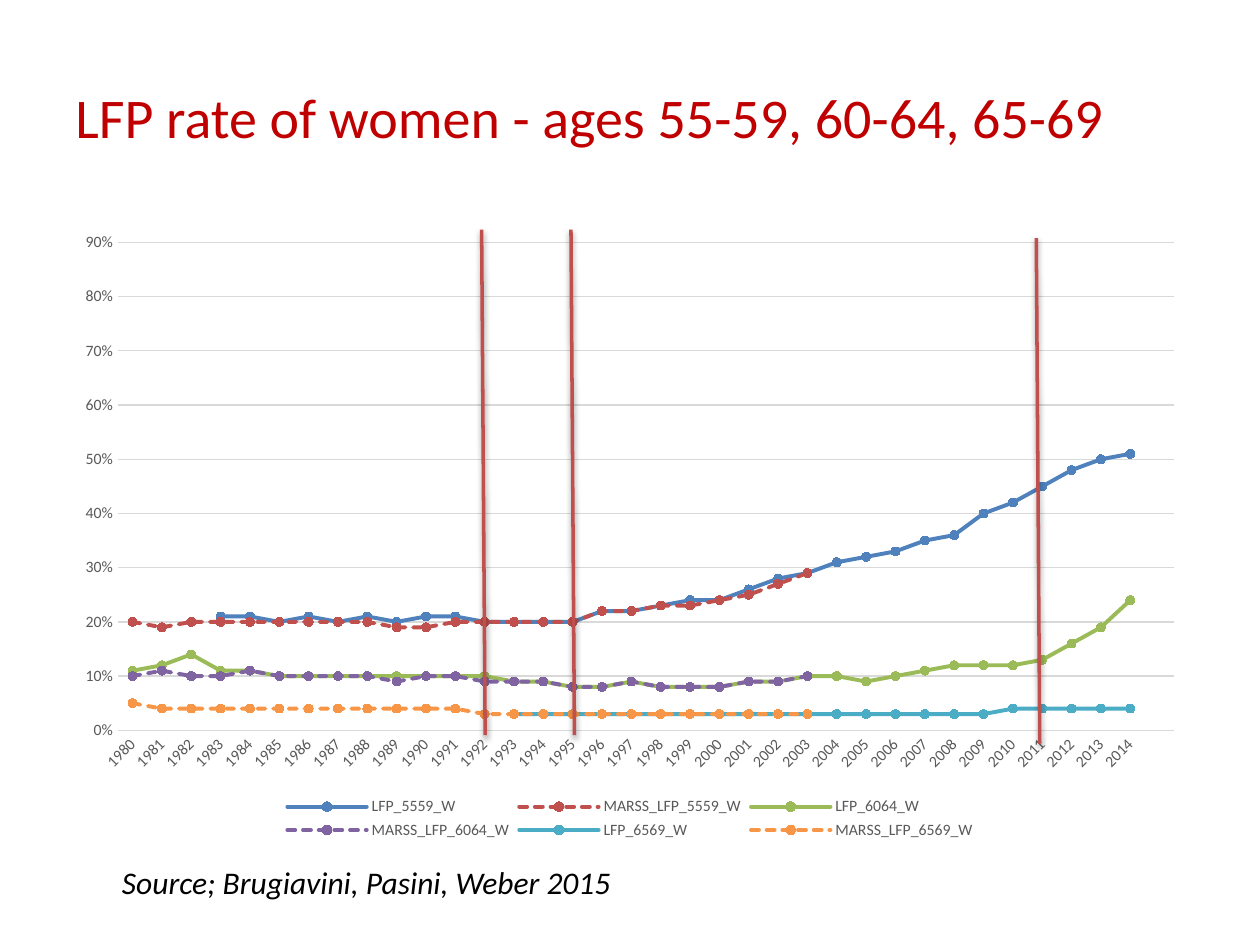
from pptx import Presentation
from pptx.chart.data import CategoryChartData
from pptx.dml.color import RGBColor
from pptx.enum.chart import (XL_CHART_TYPE as ChartType, XL_LEGEND_POSITION as LegendPos,
                             XL_MARKER_STYLE as MarkerStyle, XL_TICK_MARK as TickMark)
from pptx.enum.dml import MSO_LINE_DASH_STYLE as Dash
from pptx.enum.shapes import MSO_CONNECTOR as Connector
from pptx.enum.text import MSO_ANCHOR as Anchor, MSO_AUTO_SIZE as AutoSize
from pptx.oxml import parse_xml
from pptx.oxml.ns import nsdecls, qn
from pptx.util import Cm, Pt

FONT = "Calibri"
COLORS = {"title": "C00000", "text": "000000", "label": "595959", "grid": "D9D9D9",
          "blue": "4F81BD", "red": "C0504D", "green": "9BBB59",
          "purple": "8064A2", "teal": "4BACC6", "orange": "F79646"}
FIRST_YEAR, LAST_YEAR = 1980, 2014

# Name, colour, dashed, first year, rates in percent
RATES = [
    ("LFP_5559_W", "blue", False, 1983,
     [21, 21, 20, 21, 20, 21, 20, 21, 21, 20, 20, 20, 20, 22, 22, 23, 24, 24, 26, 28, 29,
      31, 32, 33, 35, 36, 40, 42, 45, 48, 50, 51]),
    ("MARSS_LFP_5559_W", "red", True, 1980,
     [20, 19, 20, 20, 20, 20, 20, 20, 20, 19, 19, 20, 20, 20, 20, 20, 22, 22, 23, 23, 24,
      25, 27, 29]),
    ("LFP_6064_W", "green", False, 1980,
     [11, 12, 14, 11, 11, 10, 10, 10, 10, 10, 10, 10, 10, 9, 9, 8, 8, 9, 8, 8, 8, 9, 9, 10,
      10, 9, 10, 11, 12, 12, 12, 13, 16, 19, 24]),
    ("MARSS_LFP_6064_W", "purple", True, 1980,
     [10, 11, 10, 10, 11, 10, 10, 10, 10, 9, 10, 10, 9, 9, 9, 8, 8, 9, 8, 8, 8, 9, 9, 10]),
    ("LFP_6569_W", "teal", False, 1993, [3] * 17 + [4] * 5),
    ("MARSS_LFP_6569_W", "orange", True, 1980, [5] + [4] * 11 + [3] * 12),
]

# Reform markers, relative to the chart: foot x, top y
REFORMS = [(8.51, 0.18), (10.31, 0.18), (19.69, 0.35)]
REFORM_HEIGHT, REFORM_LEAN = 10.19, 0.07


def color(name):
    return RGBColor.from_string(COLORS[name])


def style_font(font, size, name):
    font.name, font.size = FONT, Pt(size)
    font.color.rgb = color(name)


def add_text(slide, box, text, size, name, italic=False, wrap=True):
    frame = slide.shapes.add_textbox(*map(Cm, box)).text_frame
    frame.word_wrap = wrap
    frame.vertical_anchor = Anchor.MIDDLE if wrap else Anchor.TOP
    frame.auto_size = AutoSize.NONE if wrap else AutoSize.SHAPE_TO_FIT_TEXT
    frame.text = text
    font = frame.paragraphs[0].runs[0].font
    style_font(font, size, name)
    font.italic = italic


def rate_data():
    years = range(FIRST_YEAR, LAST_YEAR + 1)
    data = CategoryChartData(number_format="0%")
    data.categories = [str(year) for year in years] + [""]  # one empty slot at the end
    for name, _, _, start, percents in RATES:
        by_year = {start + i: percent / 100 for i, percent in enumerate(percents)}
        data.add_series(name, [by_year.get(year) for year in years] + [None])
    return data


def style_series(series, name, dashed):
    series.smooth = False
    series.format.line.color.rgb = color(name)
    series.format.line.width = Pt(2.25)
    if dashed:
        series.format.line.dash_style = Dash.SQUARE_DOT
    # Round line ends
    series._element.spPr.find(qn("a:ln")).set("cap", "rnd")
    marker = series.marker
    marker.style, marker.size = MarkerStyle.CIRCLE, 5
    marker.format.fill.solid()
    marker.format.fill.fore_color.rgb = color(name)
    marker.format.line.color.rgb = color(name)


def add_rate_chart(slide, box):
    chart = slide.shapes.add_chart(ChartType.LINE_MARKERS, *map(Cm, box), rate_data()).chart
    style_font(chart.font, 10, "text")
    chart.has_title = False
    chart.plots[0].vary_by_categories = False
    for series, (_, name, dashed, _, _) in zip(chart.plots[0].series, RATES):
        style_series(series, name, dashed)

    # Axes and grid
    years, rates = chart.category_axis, chart.value_axis
    for axis in (years, rates):
        axis.major_tick_mark = axis.minor_tick_mark = TickMark.NONE
        style_font(axis.tick_labels.font, 9, "label")
    rates.minimum_scale, rates.maximum_scale, rates.major_unit = 0, 0.9, 0.1
    rates.tick_labels.number_format = "0%"
    rates.tick_labels.number_format_is_linked = False
    rates.format.line.fill.background()
    for line in (years.format.line, rates.major_gridlines.format.line):
        line.color.rgb = color("grid")
        line.width = Pt(0.75)

    # Legend
    chart.has_legend = True
    chart.legend.position = LegendPos.BOTTOM
    chart.legend.include_in_layout = False
    style_font(chart.legend.font, 9, "label")


def add_reform_lines(slide, box):
    left, top = box[:2]
    for foot, head in REFORMS:
        x, y = left + foot, top + head
        reform = slide.shapes.add_connector(
            Connector.STRAIGHT, Cm(x), Cm(y + REFORM_HEIGHT), Cm(x - REFORM_LEAN), Cm(y))
        reform.line.color.rgb = color("red")
        reform.line.width = Pt(2)
        reform._element.spPr.append(parse_xml(
            f'<a:effectLst {nsdecls("a")}>'
            f'<a:outerShdw blurRad="{Pt(3.1)}" dist="{Pt(1.6)}" dir="5400000" rotWithShape="0">'
            f'<a:srgbClr val="{COLORS["text"]}"><a:alpha val="38000"/></a:srgbClr>'
            '</a:outerShdw></a:effectLst>'))


def main():
    deck = Presentation()
    deck.slide_width, deck.slide_height = Cm(25.4), Cm(19.05)
    slide = deck.slides.add_slide(deck.slide_layouts[6])
    chart_box = (1.27, 4.45, 22.86, 12.57)
    add_text(slide, (1.27, 0.76, 22.86, 3.18),
             "LFP rate of women - ages 55-59, 60-64, 65-69", 32, "title")
    add_rate_chart(slide, chart_box)
    add_reform_lines(slide, chart_box)
    add_text(slide, (2.21, 17.27, 10.46, 1.02),
             "Source; Brugiavini, Pasini, Weber 2015", 18, "text", italic=True, wrap=False)
    deck.save("out.pptx")


if __name__ == "__main__":
    main()
